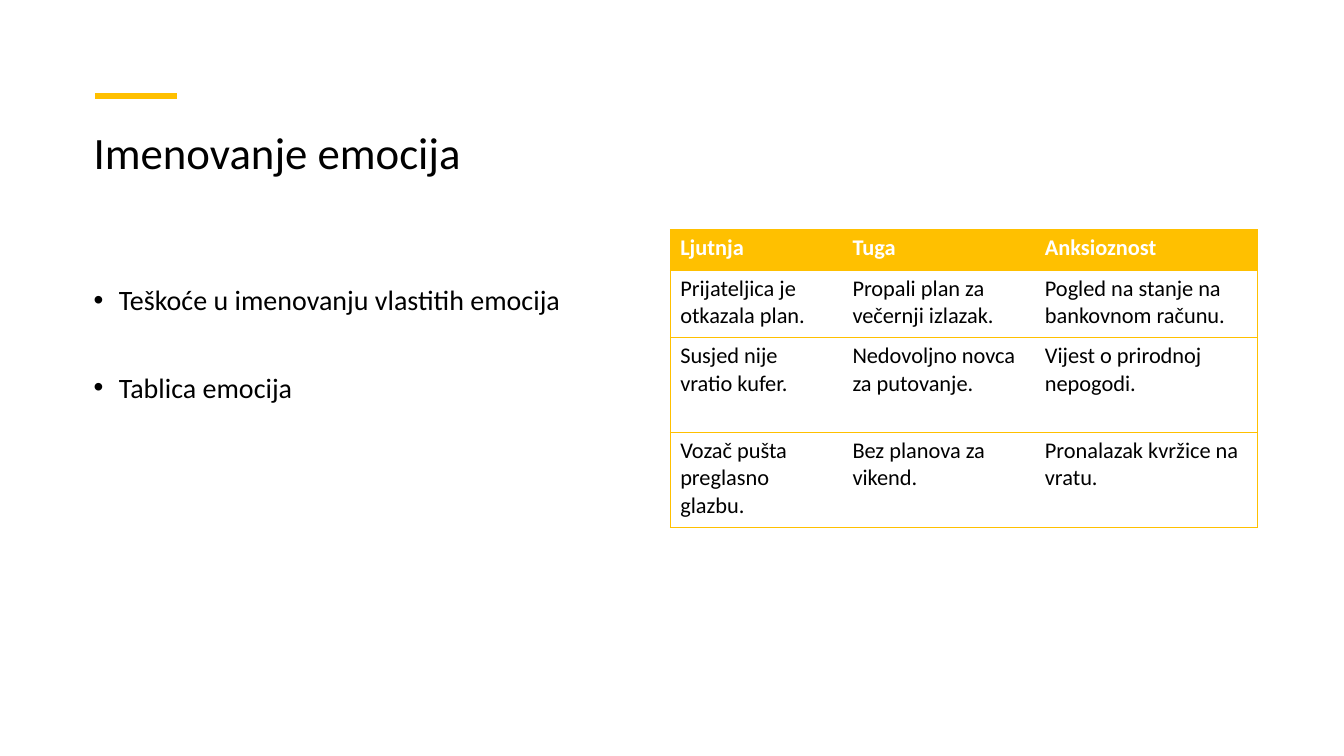
import pptx
import pptx.dml.color
import pptx.enum.shapes
import pptx.enum.text
import pptx.oxml
import pptx.oxml.ns
import pptx.util

Cm = pptx.util.Cm
Pt = pptx.util.Pt

COLORS = {"accent": "FFC000", "text": "000000", "header": "FFFFFF"}
TITLE_FORMAT = {"name": "Calibri", "size": Pt(32), "bold": False}
BODY_FORMAT = {"name": "Calibri", "size": Pt(20), "bold": False}
CELL_FORMAT = {"name": "Calibri", "size": Pt(16), "bold": False}
HEADER_FORMAT = {**CELL_FORMAT, "bold": True}

BULLETS = ["Teškoće u imenovanju vlastitih emocija", "Tablica emocija"]
EMOTIONS = [
    ["Ljutnja", "Tuga", "Anksioznost"],
    ["Prijateljica je otkazala plan.", "Propali plan za večernji izlazak.",
     "Pogled na stanje na bankovnom računu."],
    ["Susjed nije vratio kufer.", "Nedovoljno novca za putovanje.",
     "Vijest o prirodnoj nepogodi."],
    ["Vozač pušta preglasno glazbu.", "Bez planova za vikend.",
     "Pronalazak kvržice na vratu."],
]
COLUMN_WIDTHS = [4.34, 4.85, 5.61]
ROW_HEIGHTS = [1.02, 1.7, 2.39, 2.39]


def rgb(name):
    return pptx.dml.color.RGBColor.from_string(COLORS[name])


def set_attributes(target, values):
    for name, value in values.items():
        setattr(target, name, value)


def write_text(paragraph, text, font_format, color):
    run = paragraph.add_run()
    run.text = text
    set_attributes(run.font, font_format)
    run.font.color.rgb = rgb(color)


def add_text_frame(slide, left, top, width, height):
    shape = slide.shapes.add_textbox(Cm(left), Cm(top), Cm(width), Cm(height))
    set_attributes(shape.text_frame, {
        "word_wrap": True,
        "vertical_anchor": pptx.enum.text.MSO_ANCHOR.TOP,
    })
    return shape.text_frame


def add_title(slide, left, top, width, height):
    accent = slide.shapes.add_connector(
        pptx.enum.shapes.MSO_CONNECTOR.STRAIGHT,
        Cm(left + 0.28), Cm(top), Cm(left + 2.34), Cm(top))
    accent.line.color.rgb = rgb("accent")
    accent.line.width = Pt(4.5)
    accent._element.spPr.append(pptx.oxml.parse_xml(
        f"<a:effectLst {pptx.oxml.ns.nsdecls('a')}/>"))
    frame = add_text_frame(slide, left, top + 0.74, width, height - 0.74)
    paragraph = frame.paragraphs[0]
    paragraph.line_spacing = 0.9
    write_text(paragraph, "Imenovanje emocija", TITLE_FORMAT, "text")


def add_bullets(slide, left, top, width, height):
    frame = add_text_frame(slide, left, top, width, height)
    for index, text in enumerate(BULLETS):
        paragraph = frame.add_paragraph() if index else frame.paragraphs[0]
        set_attributes(paragraph, {
            "line_spacing": 0.9,
            "space_before": Pt(41 if index else 0),
        })
        properties = paragraph._p.get_or_add_pPr()
        properties.set("marL", str(Cm(0.635)))
        properties.set("indent", str(-Cm(0.635)))
        for markup in ('buFont {} typeface="Arial"', 'buChar {} char="•"'):
            tag = markup.format(pptx.oxml.ns.nsdecls("a"))
            properties.append(pptx.oxml.parse_xml(f"<a:{tag}/>"))
        write_text(paragraph, text, BODY_FORMAT, "text")


def add_border(cell, side, visible):
    fill = "<a:noFill/>"
    if visible:
        fill = f'<a:solidFill><a:srgbClr val="{COLORS["accent"]}"/></a:solidFill>'
    cell._tc.get_or_add_tcPr().append(pptx.oxml.parse_xml(
        f'<a:ln{side} {pptx.oxml.ns.nsdecls("a")} w="{Pt(0.5)}">{fill}</a:ln{side}>'))


def add_emotion_table(slide, left, top):
    table = slide.shapes.add_table(
        len(ROW_HEIGHTS), len(COLUMN_WIDTHS), Cm(left), Cm(top),
        Cm(sum(COLUMN_WIDTHS)), Cm(sum(ROW_HEIGHTS))).table
    table.horz_banding = False
    for column, width in zip(table.columns, COLUMN_WIDTHS):
        column.width = Cm(width)
    last_column = len(COLUMN_WIDTHS) - 1
    for row_index, (row, height) in enumerate(zip(table.rows, ROW_HEIGHTS)):
        row.height = Cm(height)
        is_header = row_index == 0
        for column_index, cell in enumerate(row.cells):
            borders = {"L": column_index == 0, "R": column_index == last_column,
                       "T": True, "B": True}
            for side, visible in borders.items():
                add_border(cell, side, visible)
            if is_header:
                cell.fill.solid()
                cell.fill.fore_color.rgb = rgb("accent")
            else:
                cell.fill.background()
            write_text(cell.text_frame.paragraphs[0],
                       EMOTIONS[row_index][column_index],
                       HEADER_FORMAT if is_header else CELL_FORMAT,
                       "header" if is_header else "text")


def main():
    presentation = pptx.Presentation()
    set_attributes(presentation, {"slide_width": Cm(33.87), "slide_height": Cm(19.05)})
    slide = presentation.slides.add_slide(presentation.slide_layouts[6])
    add_title(slide, 2.11, 2.42, 12.62, 4.62)
    add_bullets(slide, 2.11, 7.09, 12.62, 10.01)
    add_emotion_table(slide, 16.89, 5.78)
    presentation.save("out.pptx")


if __name__ == "__main__":
    main()
